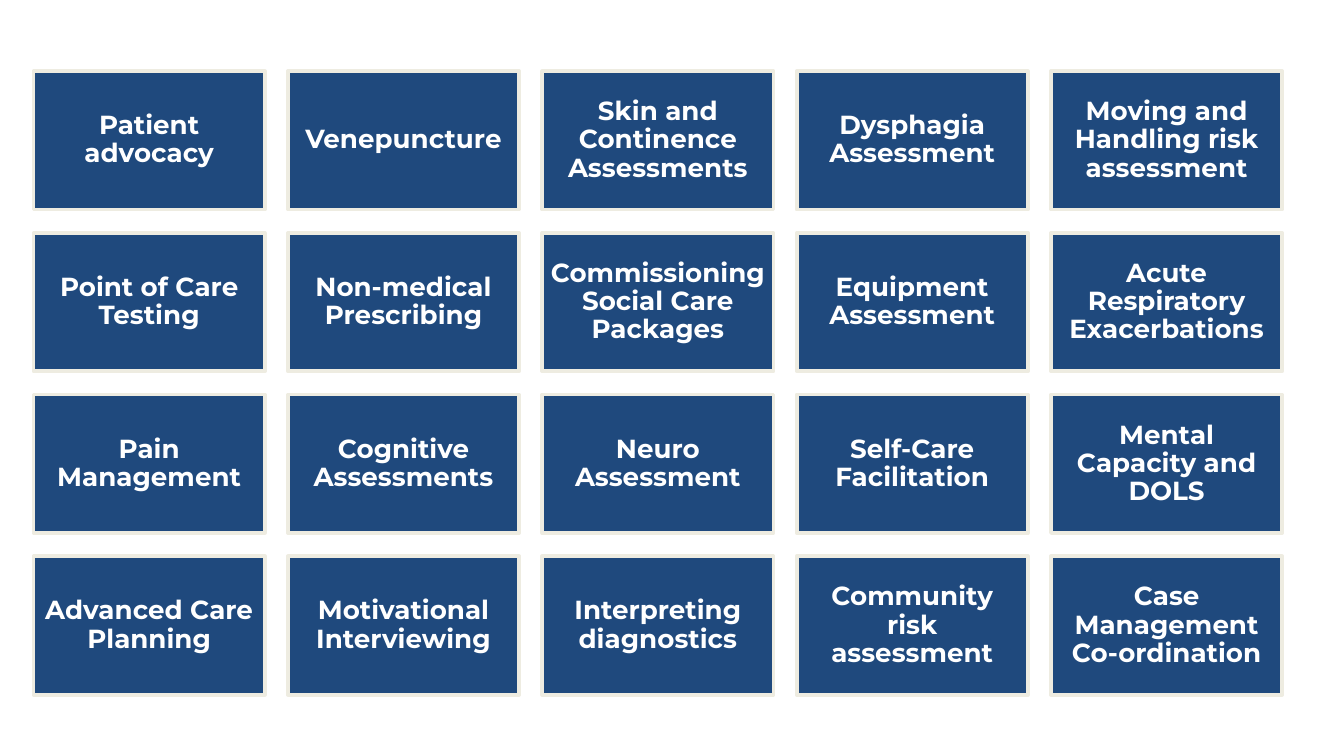
from pptx import Presentation
from pptx.dml.color import RGBColor
from pptx.enum.shapes import MSO_SHAPE
from pptx.enum.text import MSO_ANCHOR, PP_ALIGN
from pptx.util import Inches, Pt

RECT = MSO_SHAPE.RECTANGLE
MIDDLE = MSO_ANCHOR.MIDDLE
CENTER = PP_ALIGN.CENTER

NAVY, CREAM, WHITE = "1F497D", "EEECE1", "FFFFFF"

# 16:9 slide and grid geometry in inches
SLIDE_W = 10
SLIDE_H = SLIDE_W * 9 / 16
LEFT, TOP = 0.25, 0.53
CARD_W, CARD_H = 1.72, 1.03
LAST_LEFT, LAST_TOP = 7.82, 4.14

INSET = Inches(0.06)
FRAME_FORMAT = {
    "word_wrap": True,
    "vertical_anchor": MIDDLE,
    "margin_left": INSET,
    "margin_right": INSET,
    "margin_top": INSET,
    "margin_bottom": INSET,
}
PARAGRAPH_FORMAT = {"alignment": CENTER, "line_spacing": 0.9}
FONT_FORMAT = {"name": "Montserrat", "size": Pt(14), "bold": True}

SKILLS = [
    ["Patient advocacy", "Venepuncture", "Skin and Continence Assessments",
     "Dysphagia Assessment", "Moving and Handling risk assessment"],
    ["Point of Care Testing", "Non-medical Prescribing",
     "Commissioning Social Care Packages", "Equipment Assessment",
     "Acute Respiratory Exacerbations"],
    ["Pain Management", "Cognitive Assessments", "Neuro Assessment",
     "Self-Care Facilitation", "Mental Capacity and DOLS"],
    ["Advanced Care Planning", "Motivational Interviewing",
     "Interpreting diagnostics", "Community risk assessment",
     "Case Management Co-ordination"],
]


def color(hex_value):
    return RGBColor.from_string(hex_value)


def apply(target, values):
    for name, value in values.items():
        setattr(target, name, value)


def add_card(s, x, y, text):
    # Bordered box
    sp = s.shapes.add_shape(RECT, Inches(x), Inches(y),
                            Inches(CARD_W), Inches(CARD_H))
    sp.shadow.inherit = False
    sp.fill.solid()
    sp.fill.fore_color.rgb = color(NAVY)
    sp.line.color.rgb = color(CREAM)
    sp.line.width = Pt(2)

    # Centred label
    tf = sp.text_frame
    apply(tf, FRAME_FORMAT)
    p = tf.paragraphs[0]
    apply(p, PARAGRAPH_FORMAT)
    r = p.add_run()
    r.text = text
    apply(r.font, FONT_FORMAT)
    r.font.color.rgb = color(WHITE)


def add_skill_grid(s):
    step_x = (LAST_LEFT - LEFT) / (len(SKILLS[0]) - 1)
    step_y = (LAST_TOP - TOP) / (len(SKILLS) - 1)
    for row, skills in enumerate(SKILLS):
        for col, skill in enumerate(skills):
            add_card(s, LEFT + col * step_x, TOP + row * step_y, skill)


def main():
    prs = Presentation()
    prs.slide_width, prs.slide_height = Inches(SLIDE_W), Inches(SLIDE_H)
    s = prs.slides.add_slide(prs.slide_layouts[6])
    add_skill_grid(s)
    prs.save("out.pptx")


if __name__ == "__main__":
    main()
